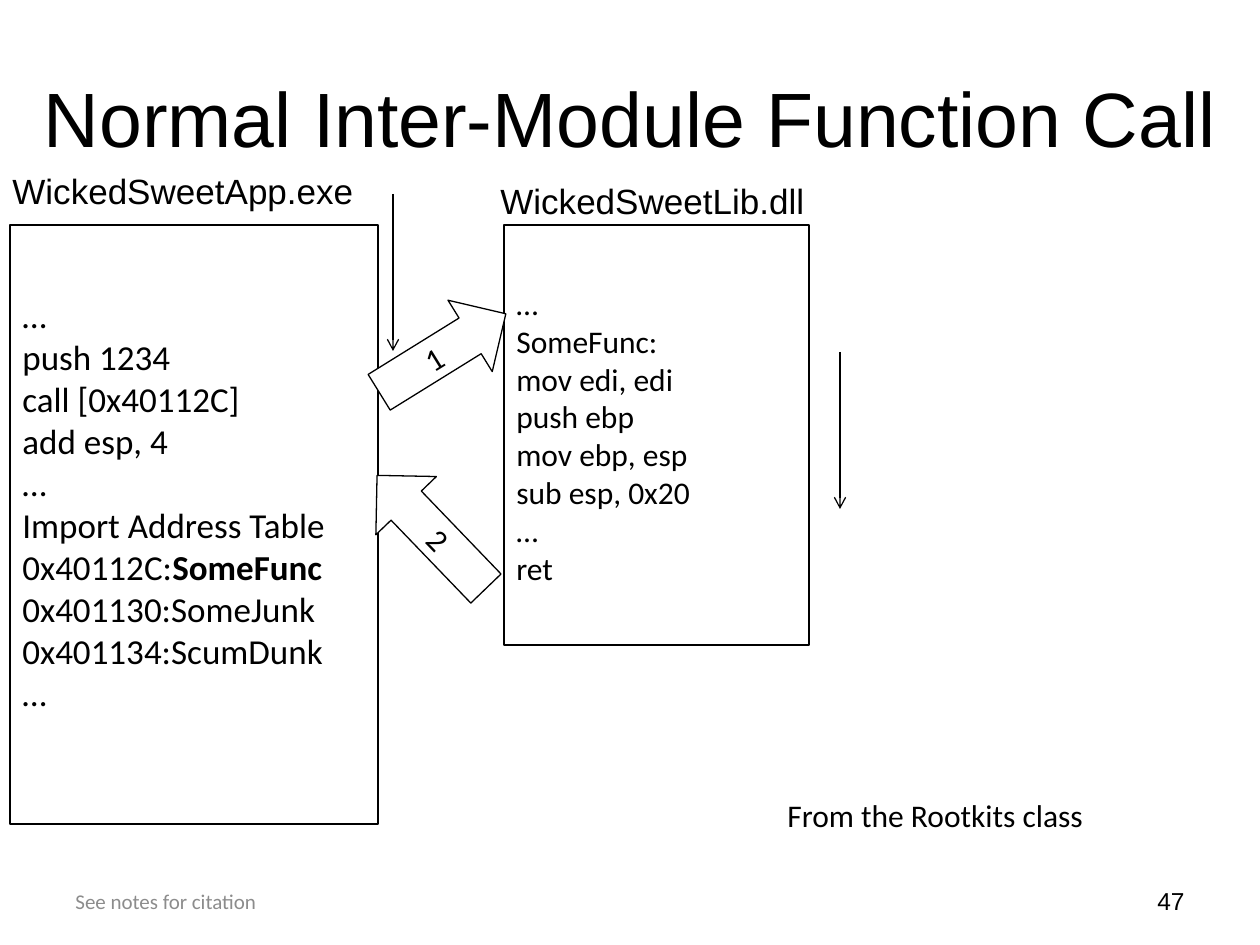
from lxml import etree
from pptx import Presentation
from pptx.dml.color import RGBColor
from pptx.enum.shapes import MSO_CONNECTOR, MSO_SHAPE
from pptx.enum.text import MSO_ANCHOR, PP_ALIGN
from pptx.oxml.ns import qn
from pptx.util import Pt

EMU_PER_PX = 914400 / 126
COLORS = {"ink": "000000", "paper": "FFFFFF", "muted": "8C8C8C"}
RECTANGLE = MSO_SHAPE.RECTANGLE
RIGHT_ARROW, LEFT_ARROW = MSO_SHAPE.RIGHT_ARROW, MSO_SHAPE.LEFT_ARROW
STRAIGHT = MSO_CONNECTOR.STRAIGHT
TOP, MIDDLE = MSO_ANCHOR.TOP, MSO_ANCHOR.MIDDLE
LEFT, CENTER, RIGHT = PP_ALIGN.LEFT, PP_ALIGN.CENTER, PP_ALIGN.RIGHT

APP_CODE = [
    "…",
    "push 1234",
    "call [0x40112C]",
    "add esp, 4",
    "…",
    "Import Address Table",
    "0x40112C:**SomeFunc",
    "0x401130:SomeJunk",
    "0x401134:ScumDunk",
    "…",
]
LIBRARY_CODE = [
    "…",
    "SomeFunc:",
    "mov edi, edi",
    "push ebp",
    "mov ebp, esp",
    "sub esp, 0x20",
    "…",
    "ret",
]


def px(length):
    """Turn a length in px into EMU."""
    return round(length * EMU_PER_PX)


def color(name):
    """Look up a named colour."""
    return RGBColor.from_string(COLORS[name])


def write(shape, lines, size, font="Calibri", ink="ink", align=LEFT, anchor=MIDDLE, wrap=True):
    """Fill a shape with lines of text; words after ** are bold."""
    frame = shape.text_frame
    frame.word_wrap = wrap
    frame.vertical_anchor = anchor
    for index, line in enumerate(lines):
        para = frame.paragraphs[0] if index == 0 else frame.add_paragraph()
        para.alignment = align
        for part, words in enumerate(line.split("**")):
            span = para.add_run()
            span.text = words
            span.font.name = font
            span.font.size = Pt(size)
            span.font.bold = part == 1
            span.font.color.rgb = color(ink)


def add_text(page, box, text, size, **style):
    """Place a text box holding one line."""
    shape = page.shapes.add_textbox(*map(px, box))
    write(shape, [text], size, **style)


def add_outlined(page, kind, box):
    """Place a white shape with a thin black outline."""
    shape = page.shapes.add_shape(kind, *map(px, box))
    shape.shadow.inherit = False
    shape.fill.solid()
    shape.fill.fore_color.rgb = color("paper")
    shape.line.color.rgb = color("ink")
    shape.line.width = Pt(0.75)
    return shape


def add_flow(page, x, y, length):
    """Draw a downward execution arrow."""
    line = page.shapes.add_connector(STRAIGHT, px(x), px(y), px(x), px(y + length))
    line.line.color.rgb = color("ink")
    line.line.width = Pt(0.75)
    etree.SubElement(line.line._get_or_add_ln(), qn("a:tailEnd"), type="arrow")
    etree.SubElement(line._element.spPr, qn("a:effectLst"))


def add_module(page, box, name, code, size, label, flow, bottom_inset=6):
    """Draw a module's code box, with its name and flow arrow offset from its corner."""
    left, top, _, _ = box
    shape = add_outlined(page, RECTANGLE, box)
    shape.text_frame.margin_bottom = px(bottom_inset)
    write(shape, code, size)
    add_flow(page, left + flow[0], top + flow[1], 157)
    label_box = (left + label[0], top + label[1], label[2], 55)
    add_text(page, label_box, name, 20, font="Arial", anchor=TOP, wrap=False)


def add_step(page, kind, box, number, angle):
    """Draw a numbered and turned block arrow."""
    shape = add_outlined(page, kind, box)
    shape.rotation = angle
    write(shape, [number], 18, align=CENTER)


def add_footer(page, box):
    """Place the citation and page number at the two ends of the footer."""
    left, top, width, height = box
    part = 294
    add_text(page, (left, top, part, height), "See notes for citation", 12, ink="muted")
    add_text(page, (left + width - part, top, part, height), "47", 14, font="Arial", align=RIGHT)


def main():
    """Build the slide and save it."""
    deck = Presentation()
    deck.slide_width, deck.slide_height = px(1260), px(945)
    page = deck.slides.add_slide(deck.slide_layouts[6])
    add_text(page, (29, 38, 1203, 157), "Normal Inter-Module Function Call", 44,
             font="Arial", align=CENTER)
    add_module(page, (10, 225, 368, 599), "WickedSweetApp.exe", APP_CODE, 20,
               label=(-10, -62, 369), flow=(383, -31), bottom_inset=49)
    add_module(page, (504, 225, 305, 420), "WickedSweetLib.dll", LIBRARY_CODE, 18,
               label=(-16, -52, 331), flow=(336, 127))
    add_step(page, RIGHT_ARROW, (368, 311, 149, 84), "1", 328.2)
    add_step(page, LEFT_ARROW, (353, 490, 157, 84), "2", 46.1)
    add_text(page, (775, 790, 422, 50), "From the Rootkits class", 18, anchor=TOP)
    add_footer(page, (63, 876, 1134, 50))
    deck.save("out.pptx")


if __name__ == "__main__":
    main()
